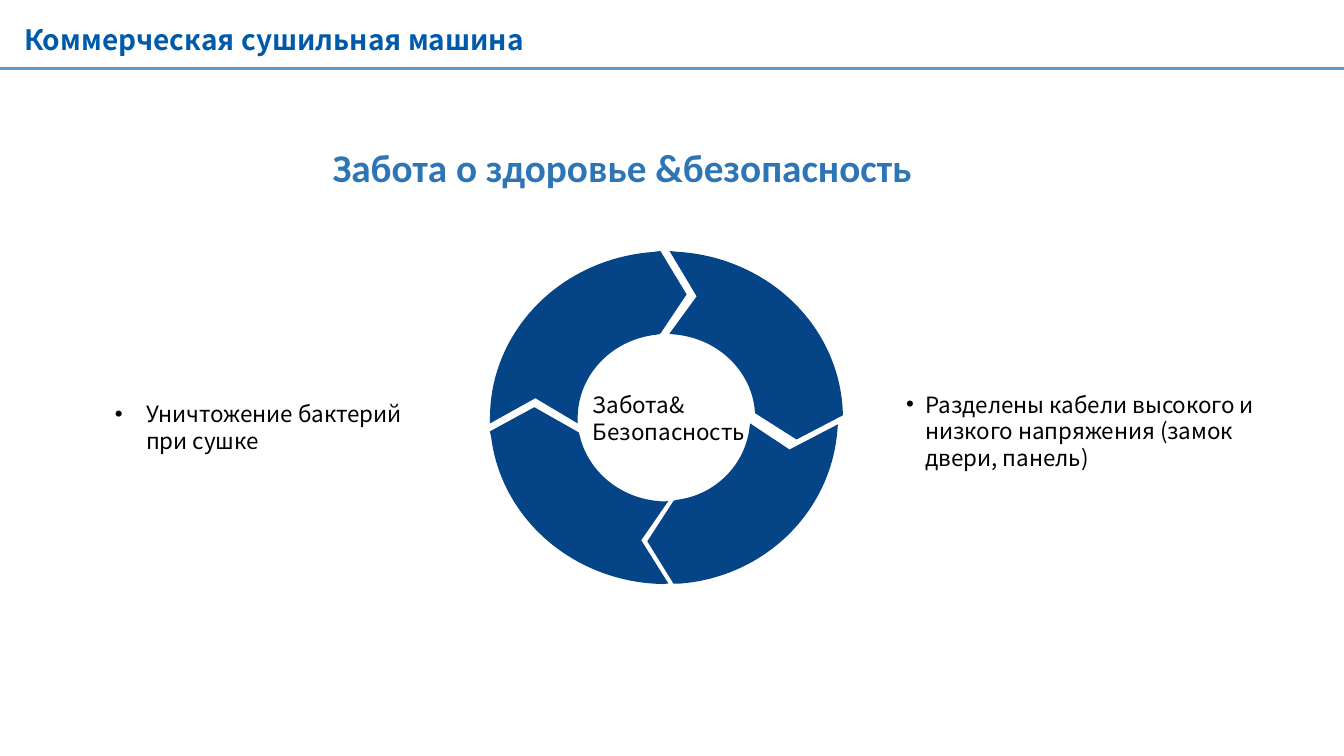
from math import atan2, cos, sin, pi
from lxml import etree
from pptx import Presentation
from pptx.dml.color import RGBColor
from pptx.enum.shapes import MSO_CONNECTOR
from pptx.enum.text import MSO_ANCHOR
from pptx.oxml.ns import qn
from pptx.util import Inches, Pt

STRAIGHT = MSO_CONNECTOR.STRAIGHT
TOP, MIDDLE = MSO_ANCHOR.TOP, MSO_ANCHOR.MIDDLE
COLORS = {"rule": "5B9BD5", "ring": "054487", "heading": "2E75B6",
          "title": "005AAB", "text": "000000"}
SANS = "Noto Sans CJK SC"
CENTER_X, CENTER_Y = 6.61, 4.145
ARC_STEPS = 40

prs = Presentation()
prs.slide_width, prs.slide_height = Inches(13.33), Inches(7.5)
s = prs.slides.add_slide(prs.slide_layouts[6])


def arc(start, end, rx, ry):
    """Points on the ring's ellipse, the short way from start to end."""
    a, b = (atan2((y - CENTER_Y) / ry, (x - CENTER_X) / rx) for x, y in (start, end))
    sweep = (b - a + pi) % (2 * pi) - pi
    angles = [a + sweep * i / ARC_STEPS for i in range(1, ARC_STEPS)]
    return [start] + [(CENTER_X + rx * cos(t), CENTER_Y + ry * sin(t)) for t in angles] + [end]


def add_text(box, lines, size, color, font=SANS, bold=False, anchor=TOP,
             inset=(0.1, 0.05), indent=0):
    """Text box; an indent above zero makes its paragraphs bulleted."""
    tf = s.shapes.add_textbox(*map(Inches, box)).text_frame
    tf.word_wrap = True
    tf.vertical_anchor = anchor
    tf.margin_left = tf.margin_right = Inches(inset[0])
    tf.margin_top = tf.margin_bottom = Inches(inset[1])
    for i, line in enumerate(lines):
        p = tf.add_paragraph() if i else tf.paragraphs[0]
        if indent:
            pPr = p._p.get_or_add_pPr()
            pPr.set("marL", str(Inches(indent)))
            pPr.set("indent", str(-Inches(indent)))
            etree.SubElement(pPr, qn("a:buFont")).set("typeface", "Arial")
            etree.SubElement(pPr, qn("a:buChar")).set("char", "•")
        r = p.add_run()
        r.text = line
        r.font.size, r.font.bold, r.font.name = Pt(size), bold, font
        r.font.color.rgb = RGBColor.from_string(COLORS[color])
        for tag in ("a:ea", "a:cs"):
            etree.SubElement(r.font._element, qn(tag)).set("typeface", font)


# Header rule
rule = s.shapes.add_connector(STRAIGHT, 0, Inches(0.68), prs.slide_width, Inches(0.68))
rule.line.color.rgb = RGBColor.from_string(COLORS["rule"])
rule.line.width = Pt(2.25)
etree.SubElement(rule._element.spPr, qn("a:effectLst"))

# Ring: outer arc ends, head tip, inner arc ends, tail notch, outer and inner radii
segments = [
    ((6.64, 2.49), (8.36, 4.12), (7.9, 4.36), (7.49, 4.1), (6.64, 3.31), (6.91, 2.94),
     (1.75, 1.65), (0.88, 0.83)),
    ((4.86, 4.2), (6.55, 2.49), (6.81, 2.92), (6.55, 3.31), (5.73, 4.2), (5.31, 3.95),
     (1.75, 1.65), (0.88, 0.83)),
    ((6.63, 5.79), (4.86, 4.28), (5.3, 4.04), (5.74, 4.29), (6.63, 4.97), (6.36, 5.36),
     (1.75, 1.65), (0.88, 0.83)),
    ((8.31, 4.21), (6.68, 5.79), (6.42, 5.37), (6.68, 4.97), (7.44, 4.2), (7.83, 4.46),
     (1.7, 1.65), (0.83, 0.82)),
]
ring = s.shapes.add_group_shape()
for out_start, out_end, head, in_start, in_end, notch, outer, inner in segments:
    outline = arc(out_start, out_end, *outer) + [head] + arc(in_start, in_end, *inner) + [notch]
    points = [(Inches(x), Inches(y)) for x, y in outline]
    builder = ring.shapes.build_freeform(*points[0])
    builder.add_line_segments(points[1:], close=True)
    sp = builder.convert_to_shape()
    sp.shadow.inherit = False
    sp.fill.solid()
    sp.fill.fore_color.rgb = RGBColor.from_string(COLORS["ring"])
    sp.line.fill.background()

add_text((3.2, 1.37, 6.46, 0.57), ["Забота о здоровье &безопасность"], 28, "heading",
         font="Calibri", bold=True)
add_text((1.04, 3.77, 3.31, 0.94), ["Уничтожение бактерий при сушке"], 16, "text",
         anchor=MIDDLE, indent=0.31)
add_text((8.89, 3.82, 4.07, 0.91),
         ["Разделены кабели высокого и низкого напряжения (замок двери, панель)"], 16, "text",
         anchor=MIDDLE, indent=0.19)
add_text((0.14, 0.17, 9.44, 0.44), ["Коммерческая сушильная машина"], 20, "title", bold=True)
add_text((5.8, 3.84, 1.71, 0.62), ["Забота&", "Безопасность"], 16, "text", inset=(0.08, 0.04))

prs.save("out.pptx")
